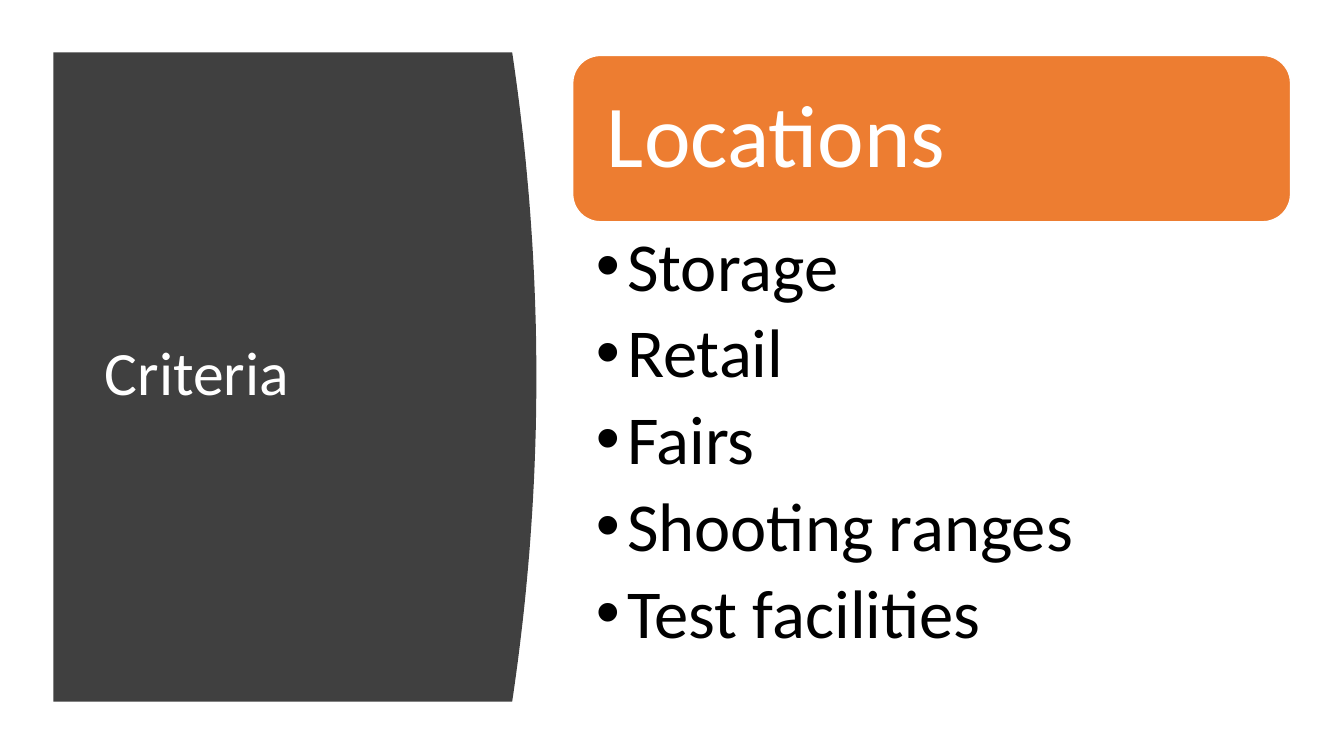
from lxml.etree import SubElement
from pptx import Presentation
from pptx.dml.color import RGBColor
from pptx.enum.shapes import MSO_SHAPE
from pptx.enum.text import MSO_ANCHOR, MSO_AUTO_SIZE, PP_ALIGN
from pptx.oxml.ns import qn
from pptx.util import Pt

PX = 9144  # EMU per px, 100 px to the inch
CURVE_STEPS = 48
LOCATIONS = ["Storage", "Retail", "Fairs", "Shooting ranges", "Test facilities"]


def px(length):
    return round(length * PX)


def color(hex_string):
    return RGBColor.from_string(hex_string)


def write(shape, lines, size, font_color, anchor, insets, bullet_indent=0, space_after=0):
    """Fill a shape with one paragraph per line; insets run left, top, right, bottom."""
    frame = shape.text_frame
    frame.word_wrap = True
    frame.auto_size = MSO_AUTO_SIZE.NONE
    frame.vertical_anchor = anchor
    (frame.margin_left, frame.margin_top,
     frame.margin_right, frame.margin_bottom) = map(px, insets)
    frame.text = "\n".join(lines)
    for paragraph in frame.paragraphs:
        paragraph.alignment = PP_ALIGN.LEFT
        paragraph.line_spacing = 0.9
        paragraph.space_before = Pt(0)
        paragraph.space_after = Pt(space_after)
        font = paragraph.runs[0].font
        font.name, font.size = "Calibri", Pt(size)
        font.color.rgb = color(font_color)
        if bullet_indent:
            paragraph.level = 1
            properties = paragraph._p.get_or_add_pPr()
            properties.set("marL", str(px(bullet_indent)))
            properties.set("indent", str(-px(bullet_indent)))
            SubElement(properties, qn("a:buFont"), typeface="Arial")
            SubElement(properties, qn("a:buChar"), char="•")


def add_title_panel(slide, left, top, width, height):
    """Dark panel whose right side bulges outwards, with the title on it."""
    bulge = 24
    right_edge = []
    for step in range(CURVE_STEPS + 1):
        ratio = step / CURVE_STEPS
        x = left + width - bulge * (2 * ratio - 1) ** 2
        right_edge.append((px(x), px(top + height * ratio)))
    builder = slide.shapes.build_freeform(px(left), px(top))
    builder.add_line_segments(right_edge + [(px(left), px(top + height))], close=True)
    panel = builder.convert_to_shape()
    panel.shadow.inherit = False
    panel.fill.solid()
    panel.fill.fore_color.rgb = color("404040")
    panel.line.fill.background()

    title = slide.shapes.title
    title.element.addprevious(panel.element)
    title.left, title.top = px(left + 41), px(top + 59)
    title.width, title.height = px(width - 105), px(height - 120)
    write(title, ["Criteria"], 44, "FFFFFF", MSO_ANCHOR.MIDDLE, (10, 5, 10, 5))


def add_list_block(slide, left, top, width, height, heading, items):
    """Rounded heading bar with a bulleted list below it."""
    bar_height = 165
    bar = slide.shapes.add_shape(
        MSO_SHAPE.ROUNDED_RECTANGLE, px(left), px(top), px(width), px(bar_height))
    bar.shadow.inherit = False
    bar.fill.solid()
    bar.fill.fore_color.rgb = color("ED7D31")
    bar.line.color.rgb = color("FFFFFF")
    bar.line.width = Pt(1)
    write(bar, [heading], 63, "FFFFFF", MSO_ANCHOR.MIDDLE, (26, 26, 26, 26))

    body = slide.shapes.add_textbox(
        px(left), px(top + bar_height + 1), px(width), px(height - bar_height - 1))
    write(body, items, 49, "000000", MSO_ANCHOR.TOP, (23, 9, 49, 9),
          bullet_indent=31, space_after=9)


def main():
    presentation = Presentation()
    presentation.slide_width, presentation.slide_height = px(1333), px(750)
    slide = presentation.slides.add_slide(presentation.slide_layouts[5])
    add_title_panel(slide, 53, 52, 479, 644)
    add_list_block(slide, 568, 55, 712, 637, "Locations", LOCATIONS)
    presentation.save("out.pptx")


if __name__ == "__main__":
    main()
